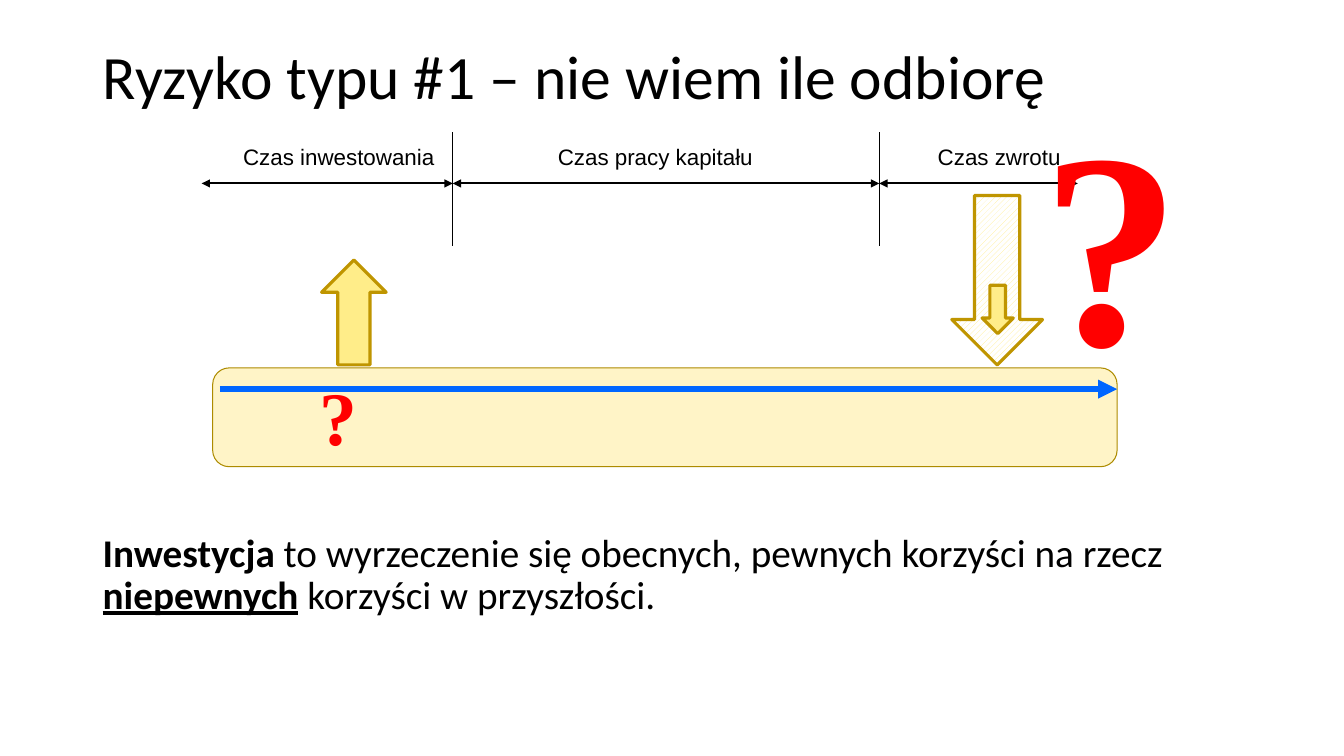
from lxml import etree
from pptx import Presentation
from pptx.dml.color import RGBColor
from pptx.enum.dml import MSO_PATTERN
from pptx.enum.shapes import MSO_CONNECTOR, MSO_SHAPE
from pptx.enum.text import MSO_ANCHOR, MSO_AUTO_SIZE, PP_ALIGN
from pptx.oxml.ns import qn
from pptx.util import Inches, Pt

BLACK = RGBColor(0x00, 0x00, 0x00)
WHITE = RGBColor(0xFF, 0xFF, 0xFF)
RED = RGBColor(0xFF, 0x00, 0x00)
BLUE = RGBColor(0x00, 0x66, 0xFF)
CREAM = RGBColor(0xFF, 0xF4, 0xC7)
OLIVE = RGBColor(0xAD, 0x8B, 0x00)
YELLOW = RGBColor(0xFF, 0xED, 0x89)
GOLD = RGBColor(0xBF, 0x95, 0x00)


def add_run(p, text, size=28, font='Calibri', color=BLACK, bold=False, underline=False):
    r = p.add_run()
    r.text = text
    f = r.font
    f.size, f.name, f.bold, f.underline = Pt(size), font, bold, underline
    f.color.rgb = color


def add_box(s, x, y, w, h, inset=None, anchor=MSO_ANCHOR.TOP, grow=False):
    tf = s.shapes.add_textbox(Inches(x), Inches(y), Inches(w), Inches(h)).text_frame
    tf.word_wrap = True
    tf.vertical_anchor = anchor
    if grow:
        tf.auto_size = MSO_AUTO_SIZE.SHAPE_TO_FIT_TEXT
    if inset is not None:
        tf.margin_left = tf.margin_right = tf.margin_top = tf.margin_bottom = Inches(inset)
    return tf.paragraphs[0]


def add_line(s, x1, y1, x2, y2, width, color=BLACK, ends=()):
    c = s.shapes.add_connector(MSO_CONNECTOR.STRAIGHT, Inches(x1), Inches(y1), Inches(x2), Inches(y2))
    c.line.width = Pt(width)
    c.line.color.rgb = color
    ln = c.line._get_or_add_ln()
    for end in ends:
        etree.SubElement(ln, qn(f'a:{end}'), type='triangle')
    etree.SubElement(c._element.spPr, qn('a:effectLst'))


def add_block(s, kind, x, y, w, h, fill=YELLOW, line=GOLD, width=2.25, hatched=False):
    sp = s.shapes.add_shape(kind, Inches(x), Inches(y), Inches(w), Inches(h))
    sp.shadow.inherit = False
    if hatched:
        sp.fill.patterned()
        sp.fill.pattern = MSO_PATTERN.WIDE_UPWARD_DIAGONAL
        sp.fill.fore_color.rgb = fill
        sp.fill.back_color.rgb = WHITE
    else:
        sp.fill.solid()
        sp.fill.fore_color.rgb = fill
    sp.line.color.rgb = line
    sp.line.width = Pt(width)
    return sp


def add_question(s, x, y, w, h, size):
    p = add_box(s, x, y, w, h, grow=True)
    add_run(p, '?', size=size, font='Times New Roman', color=RED, bold=True)


def add_title(s, x, y, w, h):
    title = s.shapes.title
    title.left, title.top, title.width, title.height = map(Inches, (x, y, w, h))
    tf = title.text_frame
    tf.word_wrap = True
    tf.vertical_anchor = MSO_ANCHOR.MIDDLE
    p = tf.paragraphs[0]
    p.alignment = PP_ALIGN.LEFT
    p.line_spacing = 0.9
    add_run(p, 'Ryzyko typu #1 – nie wiem ile odbiorę', size=44)


def add_phases(s, x, y, w, h):
    edges = [x, x + 2.49, x + 6.72, x + w]
    labels = [('Czas inwestowania', 0.15, 2.42),
              ('Czas pracy kapitału', 2.83, 3.34),
              ('Czas zwrotu', 7.07, 1.68)]
    for edge in edges[1:-1]:
        add_line(s, edge, y, edge, y + h, 0.5)
    for (text, dx, width), start, end in zip(labels, edges, edges[1:]):
        p = add_box(s, x + dx, y + 0.07, width, 0.35, inset=0.04, anchor=MSO_ANCHOR.MIDDLE, grow=True)
        p.alignment = PP_ALIGN.CENTER
        add_run(p, text, size=16, font='Arial')
        add_line(s, start, y + 0.51, end, y + 0.51, 1.5, ends=('headEnd', 'tailEnd'))


def add_timeline(s, x, y, w, h):
    add_block(s, MSO_SHAPE.ROUNDED_RECTANGLE, x, y, w, h, fill=CREAM, line=OLIVE, width=0.75)
    add_line(s, x + 0.07, y + 0.21, x + w, y + 0.21, 4.5, color=BLUE, ends=('tailEnd',))
    add_question(s, x + 0.96, y - 0.03, 1.12, 1.01, 54)


def add_cash_flows(s, x, y, w, h):
    bottom = y + h
    add_block(s, MSO_SHAPE.UP_ARROW, x, bottom - 1.04, 0.64, 1.04)
    add_question(s, x + w - 1.12, y - 1.33, 1.12, 3.45, 199)
    add_block(s, MSO_SHAPE.DOWN_ARROW, x + 6.25, y, 0.9, h, hatched=True)
    add_block(s, MSO_SHAPE.DOWN_ARROW, x + 6.55, y + 0.89, 0.31, 0.48)


def add_definition(s, x, y, w, h):
    p = add_box(s, x, y, w, h)
    p.line_spacing = 0.9
    p.space_before = Pt(10)
    add_run(p, 'Inwestycja', bold=True)
    add_run(p, ' to wyrzeczenie się obecnych, pewnych korzyści na rzecz ')
    add_run(p, 'niepewnych', bold=True, underline=True)
    add_run(p, ' korzyści w przyszłości.')


def main():
    prs = Presentation()
    prs.slide_width, prs.slide_height = Inches(13.33), Inches(7.5)
    s = prs.slides.add_slide(prs.slide_layouts[5])
    add_title(s, 0.92, 0.4, 11.5, 0.78)
    add_timeline(s, 2.11, 3.65, 8.97, 0.98)
    add_phases(s, 2, 1.31, 8.69, 1.13)
    add_cash_flows(s, 3.19, 1.94, 8.16, 1.68)
    add_definition(s, 0.92, 5.24, 11.5, 1.52)
    prs.save("out.pptx")


if __name__ == "__main__":
    main()
